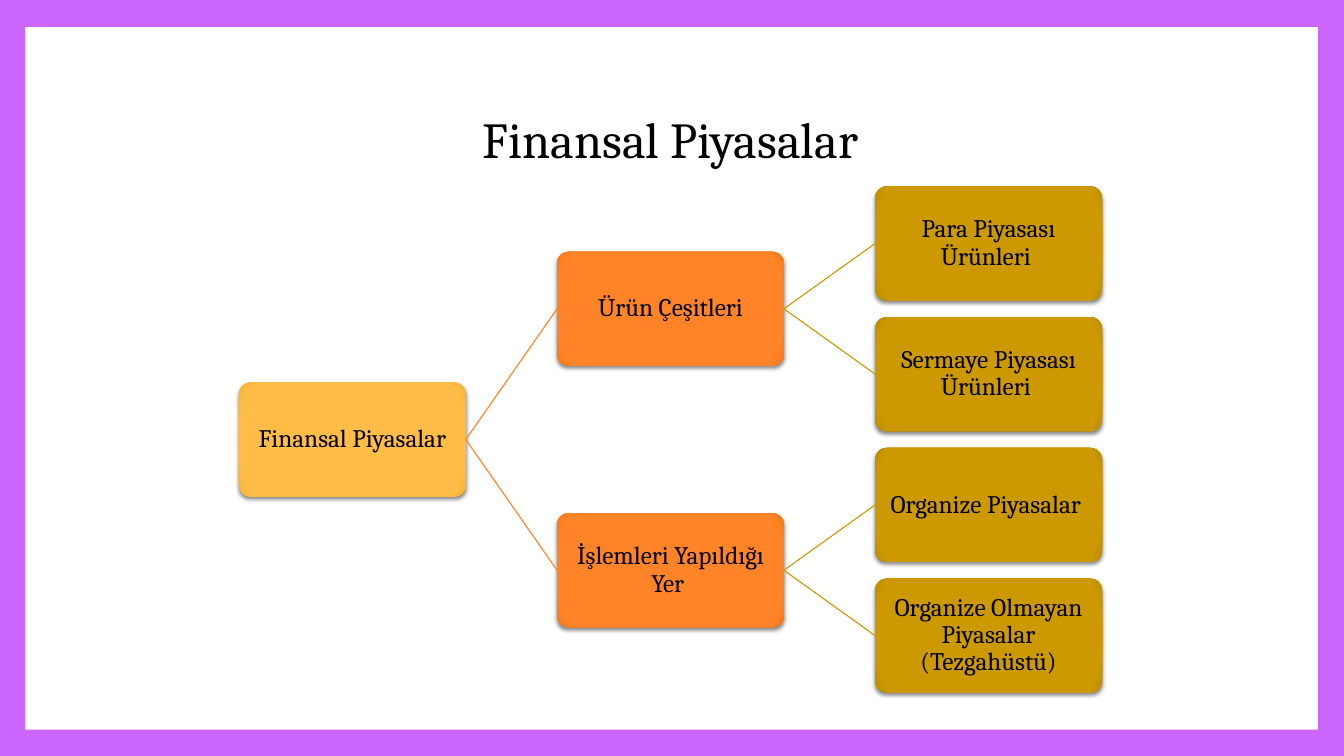
import pptx
import pptx.util
import pptx.dml.color
import pptx.enum.shapes
import pptx.enum.text
import pptx.oxml
import pptx.oxml.ns

TITLE = "Finansal Piyasalar"
TREE = ("Finansal Piyasalar", [
    ("Ürün Çeşitleri", [
        ("Para Piyasası Ürünleri ", []),
        ("Sermaye Piyasası Ürünleri ", []),
    ]),
    ("İşlemleri Yapıldığı Yer ", [
        ("Organize Piyasalar ", []),
        ("Organize Olmayan Piyasalar (Tezgahüstü)", []),
    ]),
])

COLORS = {"back": "CC66FF", "panel": "FFFFFF", "text": "000000"}
LEVELS = [("FFBD47", "F8B030"), ("FF8427", "FB7510"), ("CC9900", "B98B00")]
FONT = "Cambria"

WIDE, HIGH = 13.33, 7.5
BOX_W, BOX_H = 2.25, 1.13
LEFT, TOP = 2.37, 1.85
COL, ROW = 3.155, 1.297
INSET = 0.045

NS = pptx.oxml.ns.nsdecls("a")
GRAD = (
    '<a:gradFill {ns} rotWithShape="1"><a:gsLst>'
    '<a:gs pos="0"><a:srgbClr val="{mid}"/></a:gs>'
    '<a:gs pos="90000"><a:srgbClr val="{mid}"/></a:gs>'
    '<a:gs pos="100000"><a:srgbClr val="{edge}"/></a:gs></a:gsLst>'
    '<a:path path="circle"><a:fillToRect l="100000" t="100000" '
    'r="100000" b="100000"/></a:path></a:gradFill>'
)
SHADE = (
    f'<a:outerShdw {NS} blurRad="38100" dist="25400" dir="5400000" '
    'rotWithShape="0"><a:srgbClr val="000000"><a:alpha val="45000"/>'
    '</a:srgbClr></a:outerShdw>'
)

inch = pptx.util.Inches
rgb = pptx.dml.color.RGBColor.from_string
ANCHOR = pptx.enum.text.MSO_ANCHOR
SHAPE = pptx.enum.shapes.MSO_SHAPE


def put(thing, formats):
    for name, value in formats.items():
        setattr(thing, name, value)


def write(shape, text, size, inset, after=0):
    frame = shape.text_frame
    put(frame, {"word_wrap": True, "vertical_anchor": ANCHOR.MIDDLE})
    put(frame, {f"margin_{side}": inch(inset)
                for side in ("left", "top", "right", "bottom")})
    para = frame.paragraphs[0]
    put(para, {"text": text, "line_spacing": 0.9,
               "alignment": pptx.enum.text.PP_ALIGN.CENTER,
               "space_after": pptx.util.Pt(after)})
    font = para.runs[0].font
    put(font, {"name": FONT, "size": pptx.util.Pt(size)})
    font.color.rgb = rgb(COLORS["text"])


def add_box(shapes, text, level, row):
    box = shapes.add_shape(
        SHAPE.ROUNDED_RECTANGLE, inch(LEFT + level * COL),
        inch(TOP + row * ROW), inch(BOX_W), inch(BOX_H))
    box.adjustments[0] = 0.1
    box.line.fill.background()
    box.fill.solid()
    mid, edge = LEVELS[level]
    props = box._element.spPr
    props.replace(props.find(pptx.oxml.ns.qn("a:solidFill")),
                  pptx.oxml.parse_xml(GRAD.format(ns=NS, mid=mid, edge=edge)))
    box.shadow.inherit = False
    props.find(pptx.oxml.ns.qn("a:effectLst")).append(
        pptx.oxml.parse_xml(SHADE))
    write(box, text, 18, INSET, 6.3)
    return box


def add_link(shapes, start, end, color):
    link = shapes.add_connector(
        pptx.enum.shapes.MSO_CONNECTOR.STRAIGHT, 0, 0, 0, 0)
    link.begin_connect(start, 3)
    link.end_connect(end, 1)
    link.line.width = pptx.util.Pt(0.79)
    link.line.color.rgb = rgb(color)
    link._element.spPr.append(pptx.oxml.parse_xml(f"<a:effectLst {NS}/>"))


def grow(shapes, node, level=0, first=0):
    """Draw a branch; return its box, its row and the next free row."""
    text, kids = node
    boxes, rows, free = [], [], first
    for kid in kids:
        box, row, free = grow(shapes, kid, level + 1, free)
        boxes.append(box)
        rows.append(row)
    row = sum(rows) / len(rows) if rows else first
    root = add_box(shapes, text, level, row)
    for box in boxes:
        add_link(shapes, root, box, LEVELS[level + 1][0])
    return root, row, max(free, first + 1)


def main():
    deck = pptx.Presentation()
    put(deck, {"slide_width": inch(WIDE), "slide_height": inch(HIGH)})
    slide = deck.slides.add_slide(deck.slide_layouts[5])
    slide.background.fill.solid()
    slide.background.fill.fore_color.rgb = rgb(COLORS["back"])
    shapes = slide.shapes

    panel = shapes.add_shape(SHAPE.RECTANGLE, inch(0.25), inch(0.27),
                             inch(12.82), inch(6.97))
    panel.fill.solid()
    panel.fill.fore_color.rgb = rgb(COLORS["panel"])
    panel.line.fill.background()
    panel.shadow.inherit = False

    title = shapes.title
    title._element.addprevious(panel._element)
    put(title, {"left": inch(1.25), "top": inch(0.67),
                "width": inch(10.8), "height": inch(1.48)})
    write(title, TITLE, 36, 0.05)

    grow(shapes, TREE)
    deck.save("out.pptx")


if __name__ == "__main__":
    main()
